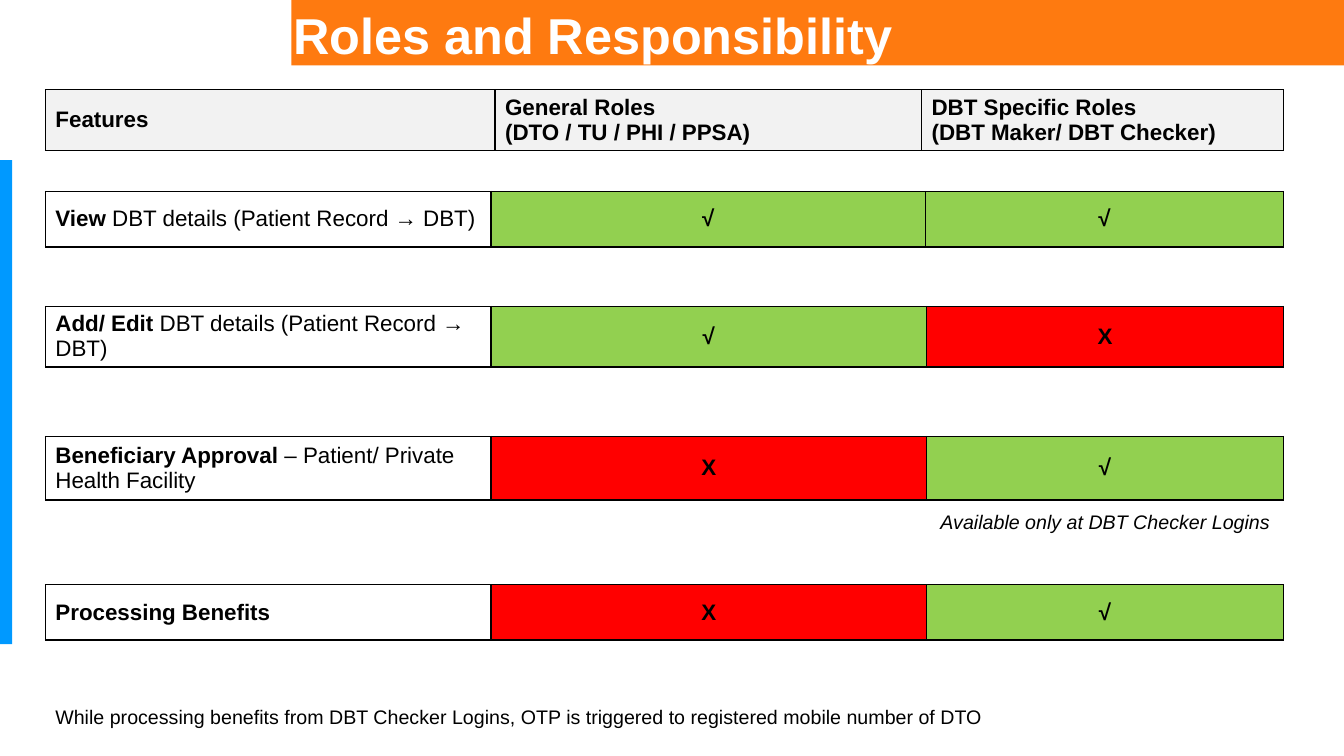
from dataclasses import dataclass

from lxml.etree import SubElement
from pptx import Presentation
from pptx.dml.color import RGBColor
from pptx.enum.shapes import MSO_SHAPE
from pptx.enum.text import MSO_ANCHOR, PP_ALIGN
from pptx.oxml.ns import qn
from pptx.slide import Slide
from pptx.table import _Cell
from pptx.text.text import _Run
from pptx.util import Emu, Pt

PX = 9144  # 100 px to the inch
BORDER = 12700


@dataclass(frozen=True)
class Theme:
    font: str = "Arial"
    title_size: int = 36
    table_size: int = 16
    note_size: int = 14
    white: str = "FFFFFF"
    black: str = "000000"
    orange: str = "FE7A10"
    blue: str = "0099FF"
    header: str = "F2F2F2"
    allowed: str = "92D050"
    denied: str = "FF0000"


@dataclass(frozen=True)
class Box:
    left: int
    top: int
    width: int
    height: int

    def emu(self) -> tuple[Emu, ...]:
        return tuple(Emu(side * PX) for side in (self.left, self.top, self.width, self.height))


@dataclass(frozen=True)
class Label:
    box: Box
    text: str
    size: int
    color: str
    bold: bool = False
    italic: bool = False
    anchor: MSO_ANCHOR = MSO_ANCHOR.TOP


@dataclass(frozen=True)
class Feature:
    top: int
    height: int
    widths: tuple[int, int, int]
    name: str
    detail: str
    marks: tuple[str, str]


THEME = Theme()
TABLE_LEFT, TABLE_WIDTH = 45, 1228
HEADER_BOX = Box(TABLE_LEFT, 89, TABLE_WIDTH, 60)
HEADER_WIDTHS = (446, 423, 359)
HEADINGS = (
    "Features",
    "General Roles\n(DTO / TU / PHI / PPSA)",
    "DBT Specific Roles\n(DBT Maker/ DBT Checker)",
)
VIEW_WIDTHS = (442, 431, 355)
ROLE_WIDTHS = (442, 432, 354)
YES, NO = "√", "X"
MARK_FILLS = {YES: THEME.allowed, NO: THEME.denied}
RECORD_DETAIL = " DBT details (Patient Record → DBT)"

FEATURES = (
    Feature(190, 55, VIEW_WIDTHS, "View", RECORD_DETAIL, (YES, YES)),
    Feature(304, 60, ROLE_WIDTHS, "Add/ Edit", RECORD_DETAIL, (YES, NO)),
    Feature(433, 63, ROLE_WIDTHS, "Beneficiary Approval ",
            "– Patient/ Private Health Facility", (NO, YES)),
    Feature(580, 55, ROLE_WIDTHS, "Processing Benefits", "", (NO, YES)),
)

BARS = (
    (Box(289, 0, 1044, 65), THEME.orange),
    (Box(0, 159, 12, 480), THEME.blue),
)

LABELS = (
    Label(Box(281, 1, 979, 66), "Roles and Responsibility", THEME.title_size,
          THEME.white, bold=True, anchor=MSO_ANCHOR.MIDDLE),
    Label(Box(923, 501, 350, 34), "Available only at DBT Checker Logins",
          THEME.note_size, THEME.black, italic=True),
    Label(Box(TABLE_LEFT, 694, TABLE_WIDTH, 34),
          "While processing benefits from DBT Checker Logins, "
          "OTP is triggered to registered mobile number of DTO",
          THEME.note_size, THEME.black),
)


def style_span(span: _Run, size: int, color: str, bold: bool = False,
               italic: bool = False) -> None:
    span.font.name = THEME.font
    span.font.size = Pt(size)
    span.font.color.rgb = RGBColor.from_string(color)
    span.font.bold = bold
    span.font.italic = italic


def add_bar(page: Slide, box: Box, color: str) -> None:
    bar = page.shapes.add_shape(MSO_SHAPE.RECTANGLE, *box.emu())
    bar.shadow.inherit = False
    bar.fill.solid()
    bar.fill.fore_color.rgb = RGBColor.from_string(color)
    bar.line.fill.background()


def add_label(page: Slide, label: Label) -> None:
    frame = page.shapes.add_textbox(*label.box.emu()).text_frame
    frame.word_wrap = True
    frame.vertical_anchor = label.anchor
    frame.text = label.text
    style_span(frame.paragraphs[0].runs[0], label.size, label.color, label.bold, label.italic)


def add_borders(cell: _Cell) -> None:
    properties = cell._tc.get_or_add_tcPr()
    for index, side in enumerate(("lnL", "lnR", "lnT", "lnB")):
        line = SubElement(properties, qn(f"a:{side}"), w=str(BORDER))
        fill = SubElement(line, qn("a:solidFill"))
        SubElement(fill, qn("a:srgbClr"), val=THEME.black)
        properties.insert(index, line)


def fill_cell(cell: _Cell, text: str, color: str, centred: bool = False,
              detail: str = "") -> None:
    cell.vertical_anchor = MSO_ANCHOR.MIDDLE
    cell.fill.solid()
    cell.fill.fore_color.rgb = RGBColor.from_string(color)
    add_borders(cell)
    cell.text_frame.text = text
    for para in cell.text_frame.paragraphs:
        para.alignment = PP_ALIGN.CENTER if centred else PP_ALIGN.LEFT
        for span in para.runs:
            style_span(span, THEME.table_size, THEME.black, bold=True)
    if detail:
        span = cell.text_frame.paragraphs[0].add_run()
        span.text = detail
        style_span(span, THEME.table_size, THEME.black)


def add_row_table(page: Slide, box: Box, widths: tuple[int, int, int]) -> list[_Cell]:
    table = page.shapes.add_table(1, len(widths), *box.emu()).table
    table.first_row = False
    table.horz_banding = False
    for column, width in zip(table.columns, widths):
        column.width = Emu(width * PX)
    return list(table.rows[0].cells)


def add_header(page: Slide) -> None:
    for cell, heading in zip(add_row_table(page, HEADER_BOX, HEADER_WIDTHS), HEADINGS):
        fill_cell(cell, heading, THEME.header)


def add_feature(page: Slide, feature: Feature) -> None:
    box = Box(TABLE_LEFT, feature.top, TABLE_WIDTH, feature.height)
    name_cell, *mark_cells = add_row_table(page, box, feature.widths)
    fill_cell(name_cell, feature.name, THEME.white, detail=feature.detail)
    for cell, mark in zip(mark_cells, feature.marks):
        fill_cell(cell, mark, MARK_FILLS[mark], centred=True)


def main() -> None:
    deck = Presentation()
    deck.slide_width, deck.slide_height = Emu(1333 * PX), Emu(750 * PX)
    page = deck.slides.add_slide(deck.slide_layouts[6])

    # Title band and side bar
    for box, color in BARS:
        add_bar(page, box, color)

    # Role matrix
    add_header(page)
    for feature in FEATURES:
        add_feature(page, feature)

    # Title and notes
    for label in LABELS:
        add_label(page, label)

    deck.save("out.pptx")


if __name__ == "__main__":
    main()
